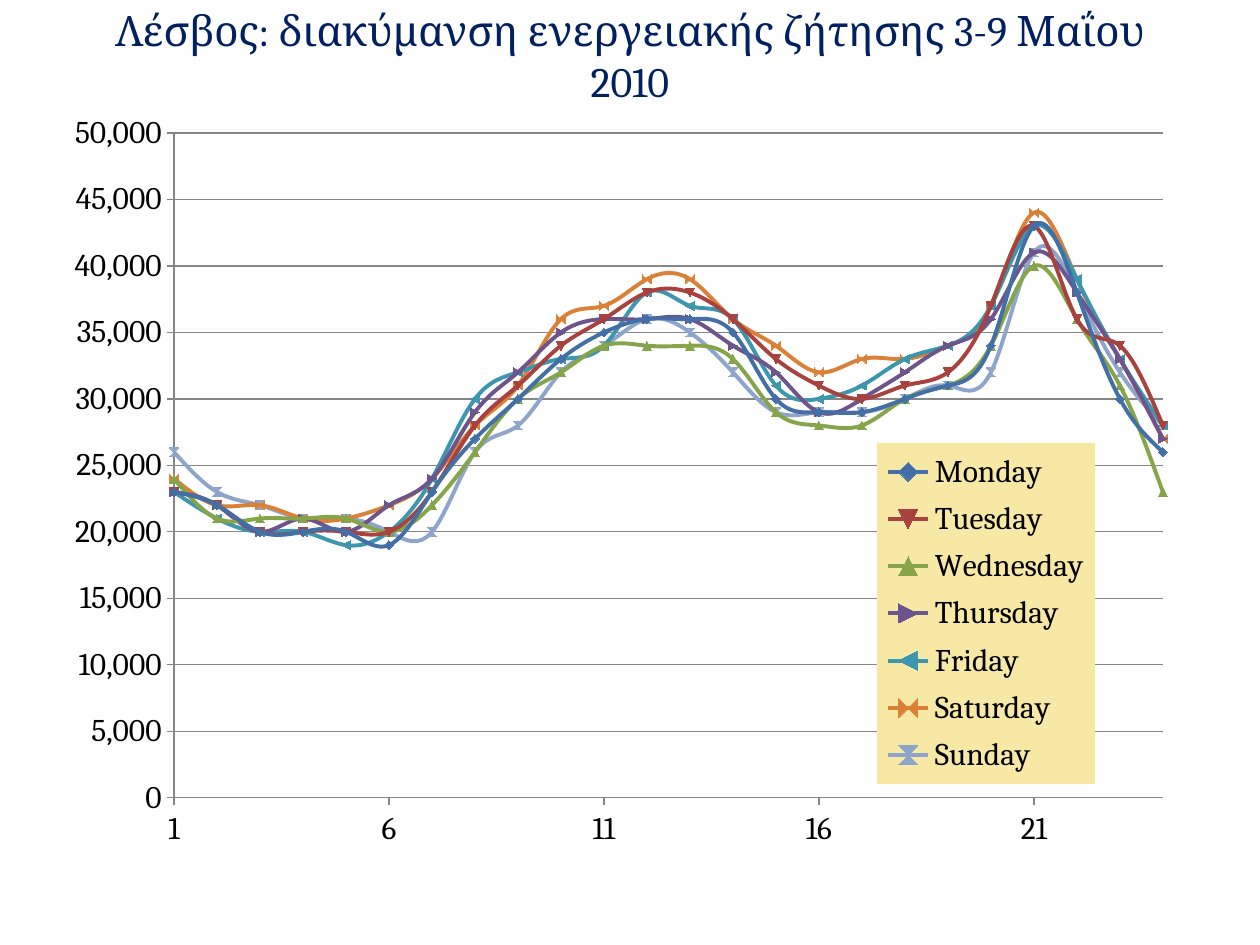
from pptx import Presentation
from pptx import util as u
from pptx.chart.data import XyChartData
from pptx.dml.color import RGBColor
from pptx.enum import chart as ch, text
from pptx.oxml import parse_xml
from pptx.oxml.ns import nsdecls, qn

PX_PER_INCH = 126
FONT = "Cambria"
NAVY = RGBColor(0x00, 0x20, 0x60)
BLACK = RGBColor(0x00, 0x00, 0x00)
GRAY = RGBColor(0x86, 0x86, 0x86)
CREAM = RGBColor(0xF8, 0xE8, 0xA6)

# Hourly demand per day, in thousands, for hours 1 to 24
DEMAND = {
    "Monday": (RGBColor(0x41, 0x6F, 0xA6), [
        23, 22, 20, 20, 20, 19, 23, 27, 30, 33, 35, 36,
        36, 35, 30, 29, 29, 30, 31, 34, 43, 38, 30, 26]),
    "Tuesday": (RGBColor(0xA8, 0x42, 0x3F), [
        23, 22, 20, 20, 20, 20, 23, 28, 31, 34, 36, 38,
        38, 36, 33, 31, 30, 31, 32, 37, 43, 36, 34, 28]),
    "Wednesday": (RGBColor(0x86, 0xA4, 0x4A), [
        24, 21, 21, 21, 21, 20, 22, 26, 30, 32, 34, 34,
        34, 33, 29, 28, 28, 30, 31, 34, 40, 36, 31, 23]),
    "Thursday": (RGBColor(0x6E, 0x54, 0x8D), [
        23, 22, 20, 21, 20, 22, 24, 29, 32, 35, 36, 36,
        36, 34, 32, 29, 30, 32, 34, 36, 41, 38, 33, 27]),
    "Friday": (RGBColor(0x3D, 0x96, 0xAE), [
        23, 21, 20, 20, 19, 20, 24, 30, 32, 33, 34, 38,
        37, 36, 31, 30, 31, 33, 34, 37, 43, 39, 33, 28]),
    "Saturday": (RGBColor(0xDA, 0x81, 0x37), [
        24, 22, 22, 21, 21, 22, 24, 28, 31, 36, 37, 39,
        39, 36, 34, 32, 33, 33, 34, 37, 44, 39, 33, 27]),
    "Sunday": (RGBColor(0x8E, 0xA5, 0xCB), [
        26, 23, 22, 21, 21, 20, 20, 26, 28, 32, 34, 36,
        35, 32, 29, 29, 29, 30, 31, 32, 41, 38, 32, 28]),
}


def px(length):
    return u.Emu(round(length * 914400 / PX_PER_INCH))


def manual_layout(box, chart_size, inner=False):
    """Layout element for a box in px, relative to the chart's corner."""
    left, top, width, height = box
    chart_width, chart_height = chart_size
    target = '<c:layoutTarget val="inner"/>' if inner else ""
    return parse_xml(
        f'<c:layout {nsdecls("c")}><c:manualLayout>{target}'
        '<c:xMode val="edge"/><c:yMode val="edge"/>'
        f'<c:x val="{left / chart_width}"/><c:y val="{top / chart_height}"/>'
        f'<c:w val="{width / chart_width}"/>'
        f'<c:h val="{height / chart_height}"/>'
        '</c:manualLayout></c:layout>')


def remove_layout(element):
    for layout in element.findall(qn("c:layout")):
        element.remove(layout)


def add_title(slide, left, top, width, height):
    frame = slide.shapes.add_textbox(
        px(left), px(top), px(width), px(height)).text_frame
    frame.word_wrap = True
    frame.vertical_anchor = text.MSO_ANCHOR.MIDDLE
    frame.text = "Λέσβος: διακύμανση ενεργειακής ζήτησης 3-9 Μαΐου 2010"
    heading = frame.paragraphs[0]
    heading.alignment = text.PP_ALIGN.CENTER
    font = heading.runs[0].font
    font.name, font.size, font.color.rgb = FONT, u.Pt(24), NAVY


def style_axis(axis, low, high, step, number_format):
    axis.minimum_scale, axis.maximum_scale = low, high
    axis.major_unit = step
    axis.major_tick_mark = ch.XL_TICK_MARK.OUTSIDE
    axis.minor_tick_mark = ch.XL_TICK_MARK.NONE
    axis.tick_labels.number_format = number_format
    axis.tick_labels.number_format_is_linked = False
    axis.format.line.color.rgb = GRAY
    axis.format.line.width = u.Pt(0.75)


def style_day(series, color):
    series.format.line.color.rgb = color
    series.format.line.width = u.Pt(2.25)
    marker = series.marker.format
    marker.fill.solid()
    marker.fill.fore_color.rgb = color
    marker.line.color.rgb = color
    element = series._element
    for old in element.findall(qn("c:smooth")):
        element.remove(old)
    element.find(qn("c:yVal")).addnext(
        parse_xml(f'<c:smooth {nsdecls("c")} val="1"/>'))


def style_legend(chart, box, chart_size):
    chart.has_legend = True
    legend = chart.legend
    legend.position = ch.XL_LEGEND_POSITION.RIGHT
    legend.include_in_layout = False
    legend.font.name, legend.font.size = FONT, u.Pt(18)
    legend.font.color.rgb = BLACK
    element = legend._element
    remove_layout(element)
    element.find(qn("c:legendPos")).addnext(manual_layout(box, chart_size))
    element.find(qn("c:txPr")).addprevious(parse_xml(
        f'<c:spPr {nsdecls("c", "a")}><a:solidFill>'
        f'<a:srgbClr val="{CREAM}"/></a:solidFill></c:spPr>'))


def add_demand_chart(slide, left, top, width, height):
    data = XyChartData(number_format="#,##0")
    for day, (_, thousands) in DEMAND.items():
        series = data.add_series(day)
        for hour, value in enumerate(thousands, start=1):
            series.add_data_point(hour, value * 1000)
    chart = slide.shapes.add_chart(
        ch.XL_CHART_TYPE.XY_SCATTER_SMOOTH,
        px(left), px(top), px(width), px(height), data).chart
    chart.has_title = False
    chart.font.name, chart.font.size = FONT, u.Pt(18)
    chart.font.color.rgb = BLACK

    # Axes and gridlines
    style_axis(chart.category_axis, 1, 24, 5, "General")
    style_axis(chart.value_axis, 0, 50000, 5000, "#,##0")
    chart.category_axis.has_major_gridlines = False
    chart.value_axis.has_major_gridlines = True
    grid = chart.value_axis.major_gridlines.format.line
    grid.color.rgb, grid.width = GRAY, u.Pt(0.75)

    # One smooth line per day
    plot = chart.plots[0]
    plot.vary_by_categories = False
    for series, (color, _) in zip(plot.series, DEMAND.values()):
        style_day(series, color)

    # Plot area and legend places
    area = chart._chartSpace.chart.plotArea
    remove_layout(area)
    area.insert(0, manual_layout((139, 28, 989, 665), (width, height), True))
    style_legend(chart, (842, 338, 218, 341), (width, height))


def main():
    deck = Presentation()
    deck.slide_width, deck.slide_height = px(1260), px(945)
    slide = deck.slides.add_slide(deck.slide_layouts[6])
    add_title(slide, 63, 26, 1134, 58)
    add_demand_chart(slide, 35, 105, 1181, 765)
    deck.save("out.pptx")


if __name__ == "__main__":
    main()
